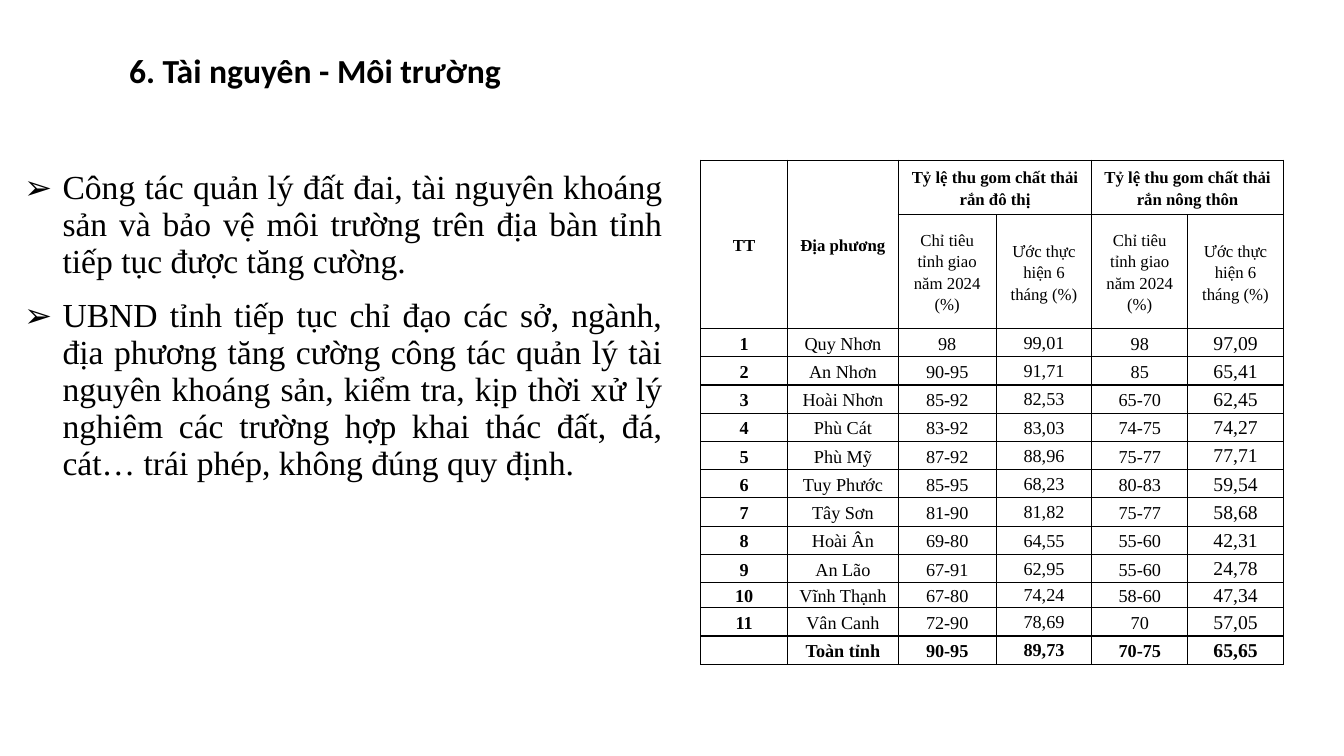
from lxml import etree
from pptx import Presentation
from pptx.dml.color import RGBColor
from pptx.enum.text import MSO_ANCHOR, MSO_AUTO_SIZE, PP_ALIGN
from pptx.oxml.ns import qn
from pptx.util import Inches, Pt

MIDDLE = MSO_ANCHOR.MIDDLE
LEFT, CENTER, JUSTIFY = PP_ALIGN.LEFT, PP_ALIGN.CENTER, PP_ALIGN.JUSTIFY
BLACK = RGBColor(0, 0, 0)
WHITE = RGBColor(255, 255, 255)
SERIF = "Times New Roman"
NO_STYLE = "{2D5ABB26-0587-4C30-8999-92F81FD0307C}"

TITLE = "6. Tài nguyên - Môi trường"
POINTS = [
    "Công tác quản lý đất đai, tài nguyên khoáng sản và bảo vệ môi trường trên địa bàn tỉnh "
    "tiếp tục được tăng cường.",
    "UBND tỉnh tiếp tục chỉ đạo các sở, ngành, địa phương tăng cường công tác quản lý tài nguyên "
    "khoáng sản, kiểm tra, kịp thời xử lý nghiêm các trường hợp khai thác đất, đá, cát… "
    "trái phép, không đúng quy định.",
]
TARGET, ESTIMATE = "Chỉ tiêu tỉnh giao năm 2024 (%)", "Ước thực hiện 6 tháng (%)"
HEADER = [
    ("TT", "Địa phương", "Tỷ lệ thu gom chất thải rắn đô thị", "",
     "Tỷ lệ thu gom chất thải rắn nông thôn", ""),
    ("", "", TARGET, ESTIMATE, TARGET, ESTIMATE),
]
MERGES = [((0, 0), (1, 0)), ((0, 1), (1, 1)), ((0, 2), (0, 3)), ((0, 4), (0, 5))]
DISTRICTS = [
    ("1", "Quy Nhơn", "98", "99,01", "98", "97,09"),
    ("2", "An Nhơn", "90-95", "91,71", "85", "65,41"),
    ("3", "Hoài Nhơn", "85-92", "82,53", "65-70", "62,45"),
    ("4", "Phù Cát", "83-92", "83,03", "74-75", "74,27"),
    ("5", "Phù Mỹ", "87-92", "88,96", "75-77", "77,71"),
    ("6", "Tuy Phước", "85-95", "68,23", "80-83", "59,54"),
    ("7", "Tây Sơn", "81-90", "81,82", "75-77", "58,68"),
    ("8", "Hoài Ân", "69-80", "64,55", "55-60", "42,31"),
    ("9", "An Lão", "67-91", "62,95", "55-60", "24,78"),
    ("10", "Vĩnh Thạnh", "67-80", "74,24", "58-60", "47,34"),
    ("11", "Vân Canh", "72-90", "78,69", "70", "57,05"),
]
TOTAL = ("", "Toàn tỉnh", "90-95", "89,73", "70-75", "65,65")
COL_WIDTHS = [0.86, 1.1, 0.97, 0.95, 0.95, 0.95]
ROW_HEIGHTS = [0.54, 1.13] + [0.28] * 9 + [0.24] + [0.28] * 2


def set_all(obj, **values):
    for name, value in values.items():
        setattr(obj, name, value)


def write(p, text, size, bold=False, font=SERIF, **layout):
    set_all(p, **layout)
    if not text:
        p._p.get_or_add_endParaRPr().set("sz", str(size * 100))
        return
    r = p.add_run()
    r.text = text
    set_all(r.font, size=Pt(size), bold=bold, name=font)
    r.font.color.rgb = BLACK


def add_plain_table(s, left, top, widths, heights):
    frame = s.shapes.add_table(len(heights), len(widths), Inches(left), Inches(top),
                               Inches(sum(widths)), Inches(sum(heights)))
    table = frame.table
    set_all(table, first_row=False, horz_banding=False)
    table._tbl.tblPr.find(qn("a:tableStyleId")).text = NO_STYLE
    for col, width in zip(table.columns, widths):
        col.width = Inches(width)
    for row, height in zip(table.rows, heights):
        row.height = Inches(height)
    return table


def add_borders(cell):
    tcPr = cell._tc.get_or_add_tcPr()
    for i, side in enumerate(("lnL", "lnR", "lnT", "lnB")):
        ln = etree.Element(qn("a:" + side), w=str(Pt(1)))
        fill = etree.SubElement(ln, qn("a:solidFill"))
        etree.SubElement(fill, qn("a:srgbClr"), val=str(BLACK))
        tcPr.insert(i, ln)


def add_bullet(p):
    pPr = p._p.get_or_add_pPr()
    pPr.set("marL", str(Inches(0.38)))
    pPr.set("indent", str(-Inches(0.38)))
    etree.SubElement(pPr, qn("a:buFont"), typeface="Wingdings")
    pPr[-1].set("typeface", "Arial")
    etree.SubElement(pPr, qn("a:buChar"), char="➢")


def add_title(s):
    title = s.shapes.title
    set_all(title, left=Inches(1.18), top=Inches(0.44), width=Inches(4.35), height=Inches(0.5))
    tf = title.text_frame
    set_all(tf, word_wrap=False, auto_size=MSO_AUTO_SIZE.SHAPE_TO_FIT_TEXT,
            vertical_anchor=MIDDLE)
    write(tf.paragraphs[0], TITLE, 24, True, "Calibri", alignment=LEFT)


def add_points(s):
    cell = add_plain_table(s, 0.14, 1.48, [6.53], [4.03]).cell(0, 0)
    set_all(cell, vertical_anchor=MIDDLE, margin_bottom=Inches(0.57))
    tf = cell.text_frame
    for i, text in enumerate(POINTS):
        p = tf.add_paragraph() if i else tf.paragraphs[0]
        write(p, text, 24, alignment=JUSTIFY, space_after=Pt(12))
        add_bullet(p)


def add_collection_rates(s):
    rows = HEADER + DISTRICTS + [TOTAL]
    table = add_plain_table(s, 6.95, 1.59, COL_WIDTHS, ROW_HEIGHTS)
    for i, row in enumerate(rows):
        is_header = i < len(HEADER)
        for j, text in enumerate(row):
            cell = table.cell(i, j)
            set_all(cell, vertical_anchor=MIDDLE, margin_left=Inches(0.07),
                    margin_right=Inches(0.07), margin_top=0, margin_bottom=0)
            cell.fill.solid()
            cell.fill.fore_color.rgb = WHITE
            add_borders(cell)
            size = 12 if is_header else 14 if j == 5 else 13
            bold = i == 0 or row is TOTAL or (j == 0 and not is_header)
            is_estimate = j in (3, 5) and not is_header
            spacing, after = (1.07, 8) if is_estimate else (1.15, 10)
            write(cell.text_frame.paragraphs[0], text, size, bold, alignment=CENTER,
                  line_spacing=spacing, space_after=Pt(after))
    for first, last in MERGES:
        table.cell(*first).merge(table.cell(*last))


def main():
    prs = Presentation()
    set_all(prs, slide_width=Inches(13.33), slide_height=Inches(7.5))
    s = prs.slides.add_slide(prs.slide_layouts[5])
    add_title(s)
    add_points(s)
    add_collection_rates(s)
    prs.save("out.pptx")


if __name__ == "__main__":
    main()
